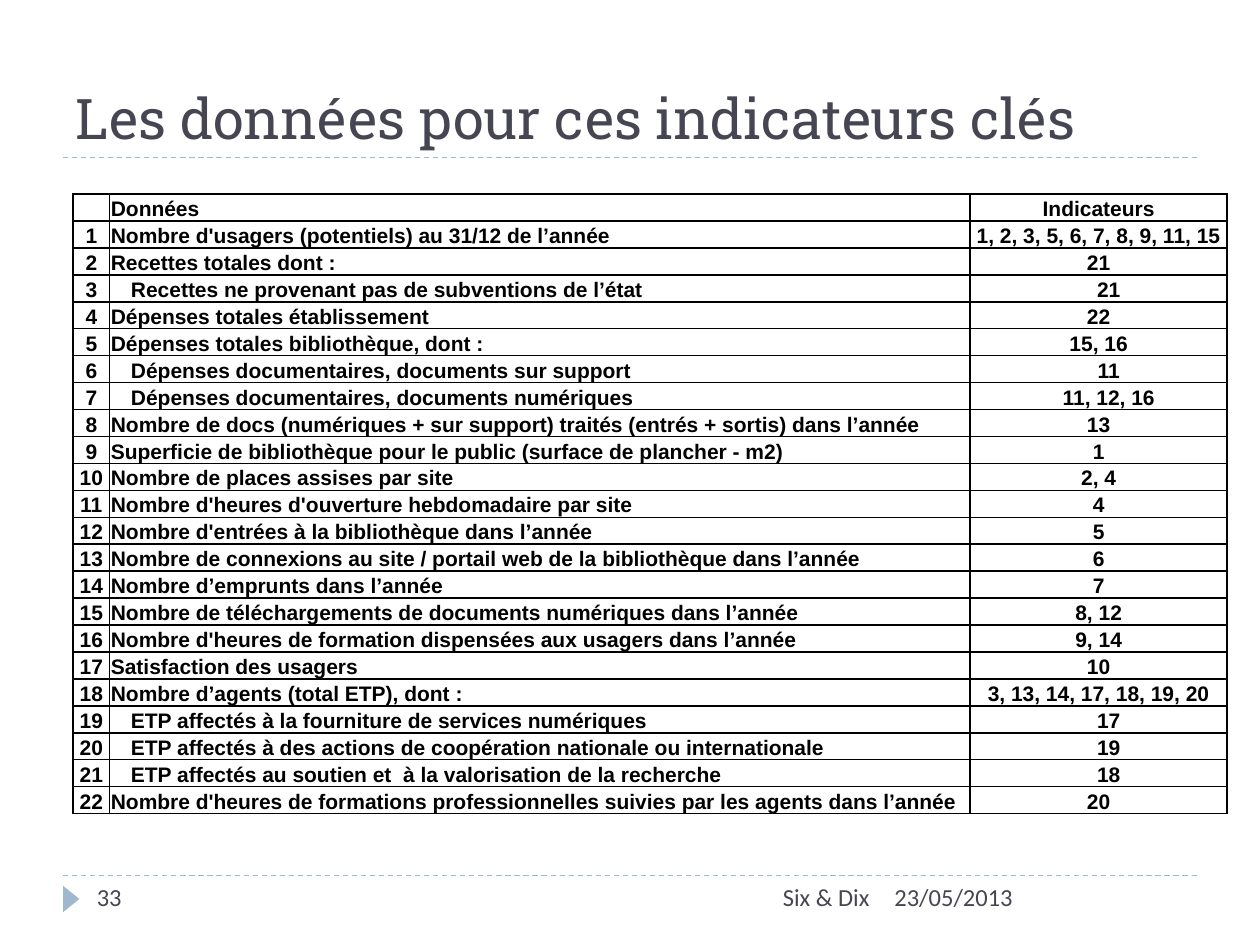
from dataclasses import dataclass

from lxml import etree
from pptx import Presentation
from pptx import util as u
from pptx.dml.color import RGBColor
from pptx.enum import dml, shapes, text
from pptx.oxml import ns

WIDE, HIGH = u.Inches(10), u.Inches(7.5)
COLS, ROWS = 20, 15
INK, RULE, BLACK = "464653", "9FB8CD", "000000"
LEFT, MID, RIGHT = text.PP_ALIGN.LEFT, text.PP_ALIGN.CENTER, text.PP_ALIGN.RIGHT
FOOT = 13.9


@dataclass
class Box:
    col: float
    row: float
    wide: float
    high: float

    def place(self) -> tuple:
        return across(self.col), down(self.row), across(self.wide), down(self.high)


@dataclass
class Label:
    words: str
    box: Box
    align: text.PP_ALIGN = LEFT


@dataclass
class Entry:
    name: str
    uses: str
    sub: bool = False


LABELS = [
    Label("23/05/2013", Box(14, FOOT, 5, 0.8)),
    Label("Six & Dix", Box(6.34, FOOT, 7.66, 0.8), RIGHT),
    Label("33", Box(1.34, FOOT, 4.34, 0.8)),
]
WIDTHS = [0.58, 13.66, 4.08]
GRID = Box(1.16, 3.08, sum(WIDTHS), 9.84)
ENTRIES = [
    Entry("Données", "Indicateurs"),
    Entry("Nombre d'usagers (potentiels) au 31/12 de l’année", "1, 2, 3, 5, 6, 7, 8, 9, 11, 15"),
    Entry("Recettes totales dont :", "21"),
    Entry("Recettes ne provenant pas de subventions de l’état", "21", True),
    Entry("Dépenses totales établissement", "22"),
    Entry("Dépenses totales bibliothèque, dont :", "15, 16"),
    Entry("Dépenses documentaires, documents sur support", "11", True),
    Entry("Dépenses documentaires, documents numériques", "11, 12, 16", True),
    Entry("Nombre de docs (numériques + sur support) traités (entrés + sortis) dans l’année", "13"),
    Entry("Superficie de bibliothèque pour le public (surface de plancher - m2)", "1"),
    Entry("Nombre de places assises par site", "2, 4"),
    Entry("Nombre d'heures d'ouverture hebdomadaire par site", "4"),
    Entry("Nombre d'entrées à la bibliothèque dans l’année", "5"),
    Entry("Nombre de connexions au site / portail web de la bibliothèque dans l’année", "6"),
    Entry("Nombre d’emprunts dans l’année", "7"),
    Entry("Nombre de téléchargements de documents numériques dans l’année", "8, 12"),
    Entry("Nombre d'heures de formation dispensées aux usagers dans l’année", "9, 14"),
    Entry("Satisfaction des usagers", "10"),
    Entry("Nombre d’agents (total ETP), dont :", "3, 13, 14, 17, 18, 19, 20"),
    Entry("ETP affectés à la fourniture de services numériques", "17", True),
    Entry("ETP affectés à des actions de coopération nationale ou internationale", "19", True),
    Entry("ETP affectés au soutien et  à la valorisation de la recherche", "18", True),
    Entry("Nombre d'heures de formations professionnelles suivies par les agents dans l’année", "20"),
]


def across(count: float) -> int:
    return round(WIDE * count / COLS)


def down(count: float) -> int:
    return round(HIGH * count / ROWS)


def tint(code: str) -> RGBColor:
    return RGBColor.from_string(code)


def style(para, words: str, face: str, size: float, code: str, align=LEFT, bold=False) -> None:
    para.text = words
    para.alignment = align
    font = para.font
    font.name, font.size, font.bold = face, u.Pt(size), bold
    font.color.rgb = tint(code)


def draw_rule(slide, row: float) -> None:
    rule = slide.shapes.add_connector(
        shapes.MSO_CONNECTOR.STRAIGHT, across(1), down(row), across(19), down(row))
    rule.line.color.rgb = tint(RULE)
    rule.line.width = u.Pt(0.75)
    rule.line.dash_style = dml.MSO_LINE.DASH
    etree.SubElement(rule._element.spPr, ns.qn("a:effectLst"))


def draw_mark(slide, box: Box) -> None:
    mark = slide.shapes.add_shape(shapes.MSO_SHAPE.ISOSCELES_TRIANGLE, *box.place())
    mark.rotation = 90
    mark.shadow.inherit = False
    mark.fill.solid()
    mark.fill.fore_color.rgb = tint(RULE)
    mark.line.fill.background()


def draw_label(slide, label: Label) -> None:
    frame = slide.shapes.add_textbox(*label.box.place()).text_frame
    frame.word_wrap = True
    style(frame.paragraphs[0], label.words, "Calibri", 14, INK, label.align)


def draw_title(slide, words: str, box: Box) -> None:
    title = slide.shapes.title
    title.left, title.top, title.width, title.height = box.place()
    title.text_frame.vertical_anchor = text.MSO_ANCHOR.BOTTOM
    style(title.text_frame.paragraphs[0], words, "Roboto Slab", 32, INK)


def add_edges(cell) -> None:
    props = cell._tc.get_or_add_tcPr()
    for spot, side in enumerate(("lnL", "lnR", "lnT", "lnB")):
        edge = etree.Element(ns.qn(f"a:{side}"), w=str(u.Pt(1)))
        fill = etree.SubElement(edge, ns.qn("a:solidFill"))
        etree.SubElement(fill, ns.qn("a:srgbClr"), val=BLACK)
        props.insert(spot, edge)


def fill_cell(cell, words: str, align, sub: bool) -> None:
    cell.fill.background()
    add_edges(cell)
    cell.vertical_anchor = text.MSO_ANCHOR.BOTTOM
    cell.margin_left = u.Inches(0.17 if sub else 0.01)
    cell.margin_right = cell.margin_top = u.Inches(0.01)
    cell.margin_bottom = 0
    para = cell.text_frame.paragraphs[0]
    style(para, words, "Arial", 12, BLACK, align, True)
    if not words:
        etree.SubElement(para._p, ns.qn("a:endParaRPr"), sz="1200")


def draw_table(slide, entries: list[Entry]) -> None:
    table = slide.shapes.add_table(len(entries), len(WIDTHS), *GRID.place()).table
    table.first_row = table.horz_banding = False
    for column, wide in zip(table.columns, WIDTHS):
        column.width = across(wide)
    for num, entry in enumerate(entries):
        table.rows[num].height = down(GRID.high / len(entries))
        fill_cell(table.cell(num, 0), str(num or ""), MID, False)
        fill_cell(table.cell(num, 1), entry.name, LEFT, entry.sub)
        fill_cell(table.cell(num, 2), entry.uses, MID, entry.sub)


def main() -> None:
    deck = Presentation()
    deck.slide_width, deck.slide_height = WIDE, HIGH
    slide = deck.slides.add_slide(deck.slide_layouts.get_by_name("Title Only"))
    for row in (FOOT, 2.5):
        draw_rule(slide, row)
    draw_mark(slide, Box(0.92, 14.14, 0.42, 0.26))
    draw_title(slide, "Les données pour ces indicateurs clés", Box(1, 0.34, 18, 2.16))
    draw_table(slide, ENTRIES)
    for label in LABELS:
        draw_label(slide, label)
    deck.save("out.pptx")


if __name__ == "__main__":
    main()
